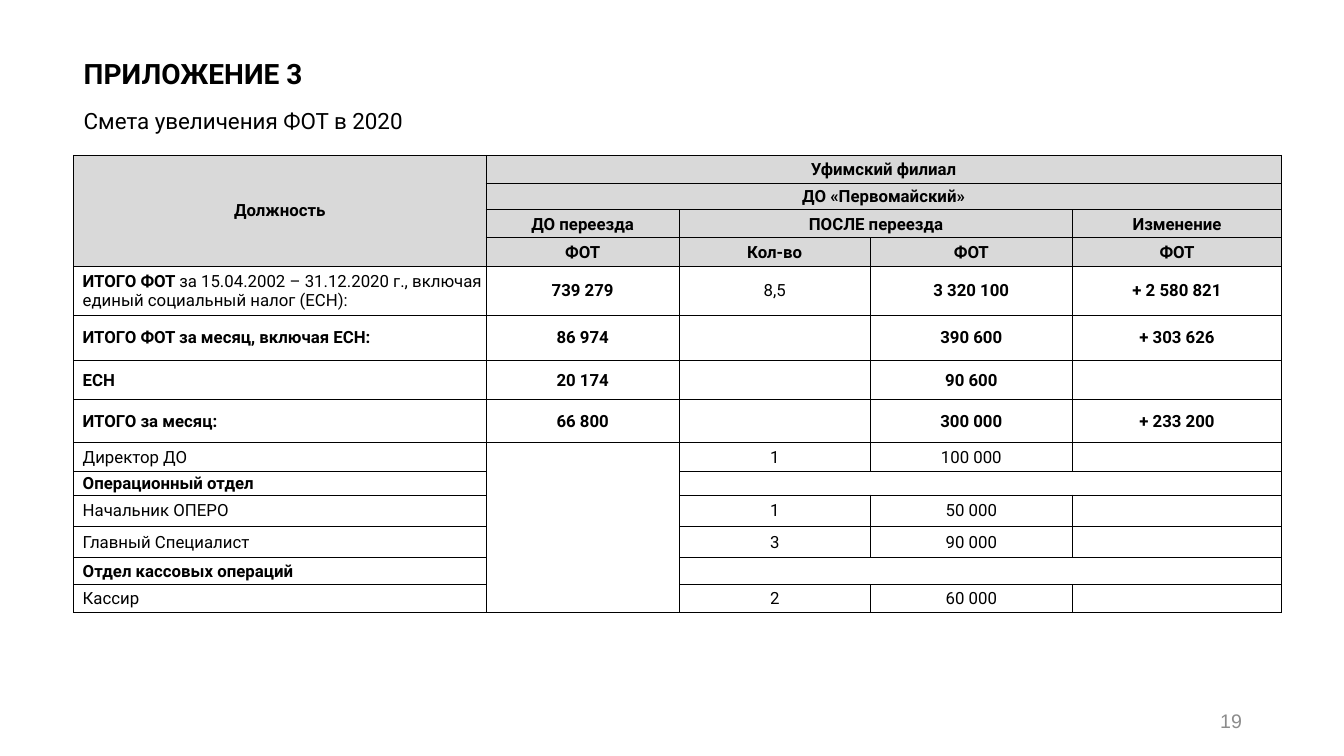
from lxml.etree import SubElement as Sub
from pptx import Presentation
from pptx.dml.color import RGBColor
from pptx.enum.text import MSO_ANCHOR as Anchor, MSO_AUTO_SIZE as Fit, PP_ALIGN as Align
from pptx.oxml.ns import qn
from pptx.util import Inches, Pt

WIDE, HIGH = Inches(13.33), Inches(7.5)
COLS = [30.68, 14.4, 14.18, 15.08, 15.53]
ROWS = [
    (3.73, ["Должность", "Уфимский филиал"]),
    (3.47, ["", "ДО «Первомайский»"]),
    (3.73, ["", "ДО переезда", "ПОСЛЕ переезда", "", "Изменение"]),
    (3.73, ["", "ФОТ", "Кол-во", "ФОТ", "ФОТ"]),
    (6.53, ["ИТОГО ФОТ |за 15.04.2002 – 31.12.2020 г., включая единый социальный налог (ЕСН):",
            "739 279", "|8,5", "3 320 100", "+ 2 580 821"]),
    (5.93, ["ИТОГО ФОТ за месяц, включая ЕСН:", "86 974", "", "390 600", "+ 303 626"]),
    (5.2, ["ЕСН", "20 174", "", "90 600"]),
    (5.73, ["ИТОГО за месяц:", "66 800", "", "300 000", "+ 233 200"]),
    (3.73, ["|Директор ДО", "", "|1", "|100 000"]),
    (3.2, ["Операционный отдел"]),
    (4.13, ["|Начальник ОПЕРО", "", "|1", "|50 000"]),
    (4.13, ["|Главный Специалист", "", "|3", "|90 000"]),
    (3.6, ["Отдел кассовых операций"]),
    (3.73, ["|Кассир", "", "|2", "|60 000"]),
]
HEAD = 4
SPANS = [(0, 0, 3, 0), (0, 1, 0, 4), (1, 1, 1, 4), (2, 2, 2, 3),
         (8, 1, 13, 1), (9, 2, 9, 4), (12, 2, 12, 4)]


def col(share):
    return round(WIDE * share / 100)


def row(share):
    return round(HIGH * share / 100)


def paint(code):
    return RGBColor.from_string(code)


def style(run, size, bold=False, face="Roboto", tone="000000"):
    font = run.font
    font.size, font.bold, font.name = Pt(size), bold, face
    font.color.rgb = paint(tone)


def add_title(slide):
    title = slide.shapes.title
    title.left, title.top, title.width, title.height = col(5.48), row(6.8), col(92.03), row(11.73)
    frame = title.text_frame
    frame.word_wrap, frame.auto_size = True, Fit.NONE
    frame.vertical_anchor = Anchor.TOP
    frame.text = "ПРИЛОЖЕНИЕ 3\nСмета увеличения ФОТ в 2020"
    for para, size, bold in zip(frame.paragraphs, (20, 16), (True, False)):
        para.alignment, para.space_after = Align.LEFT, Pt(12)
        style(para.runs[0], size, bold)


def add_edges(cell):
    props = cell._tc.get_or_add_tcPr()
    for spot, side in enumerate(("lnL", "lnR", "lnT", "lnB")):
        line = Sub(props, qn(f"a:{side}"), w=str(Pt(0.5)))
        fill = Sub(line, qn("a:solidFill"))
        Sub(fill, qn("a:srgbClr"), val="000000")
        props.insert(spot, line)


def fill_cell(cell, text, left, head):
    cell.vertical_anchor = Anchor.MIDDLE
    cell.margin_left = Inches(0.09 if left else 0.01)
    cell.margin_right = cell.margin_top = Inches(0.01)
    cell.margin_bottom = 0
    if head:
        cell.fill.solid()
        cell.fill.fore_color.rgb = paint("D9D9D9")
    else:
        cell.fill.background()
    add_edges(cell)
    para = cell.text_frame.paragraphs[0]
    para.alignment = Align.LEFT if left else Align.CENTER
    strong, _, plain = text.partition("|")
    for part, bold in ((strong, True), (plain, False)):
        if part:
            run = para.add_run()
            run.text = part
            style(run, 12, bold)
    if not text:
        Sub(para._p, qn("a:endParaRPr"), sz="1200")


def add_grid(slide):
    high = sum(size for size, _ in ROWS)
    frame = slide.shapes.add_table(len(ROWS), len(COLS), col(5.48), row(20.53),
                                   col(sum(COLS)), row(high))
    table = frame.table
    table.first_row = table.horz_banding = False
    for c, size in enumerate(COLS):
        table.columns[c].width = col(size)
    for r, (size, texts) in enumerate(ROWS):
        table.rows[r].height = row(size)
        for c in range(len(COLS)):
            text = texts[c] if c < len(texts) else ""
            fill_cell(table.cell(r, c), text, c == 0 and r >= HEAD, r < HEAD)
    for top, left, end, right in SPANS:
        table.cell(top, left).merge(table.cell(end, right))


def add_number(slide):
    box = slide.shapes.add_textbox(col(70.65), row(92.67), col(22.5), row(5.33))
    frame = box.text_frame
    frame.word_wrap, frame.vertical_anchor = True, Anchor.MIDDLE
    frame.text = "19"
    para = frame.paragraphs[0]
    para.alignment = Align.RIGHT
    style(para.runs[0], 14, face="Arial", tone="8C8C8C")


def main():
    deck = Presentation()
    deck.slide_width, deck.slide_height = WIDE, HIGH
    slide = deck.slides.add_slide(deck.slide_layouts.get_by_name("Title Only"))
    add_title(slide)
    add_grid(slide)
    add_number(slide)
    deck.save("out.pptx")


if __name__ == "__main__":
    main()
